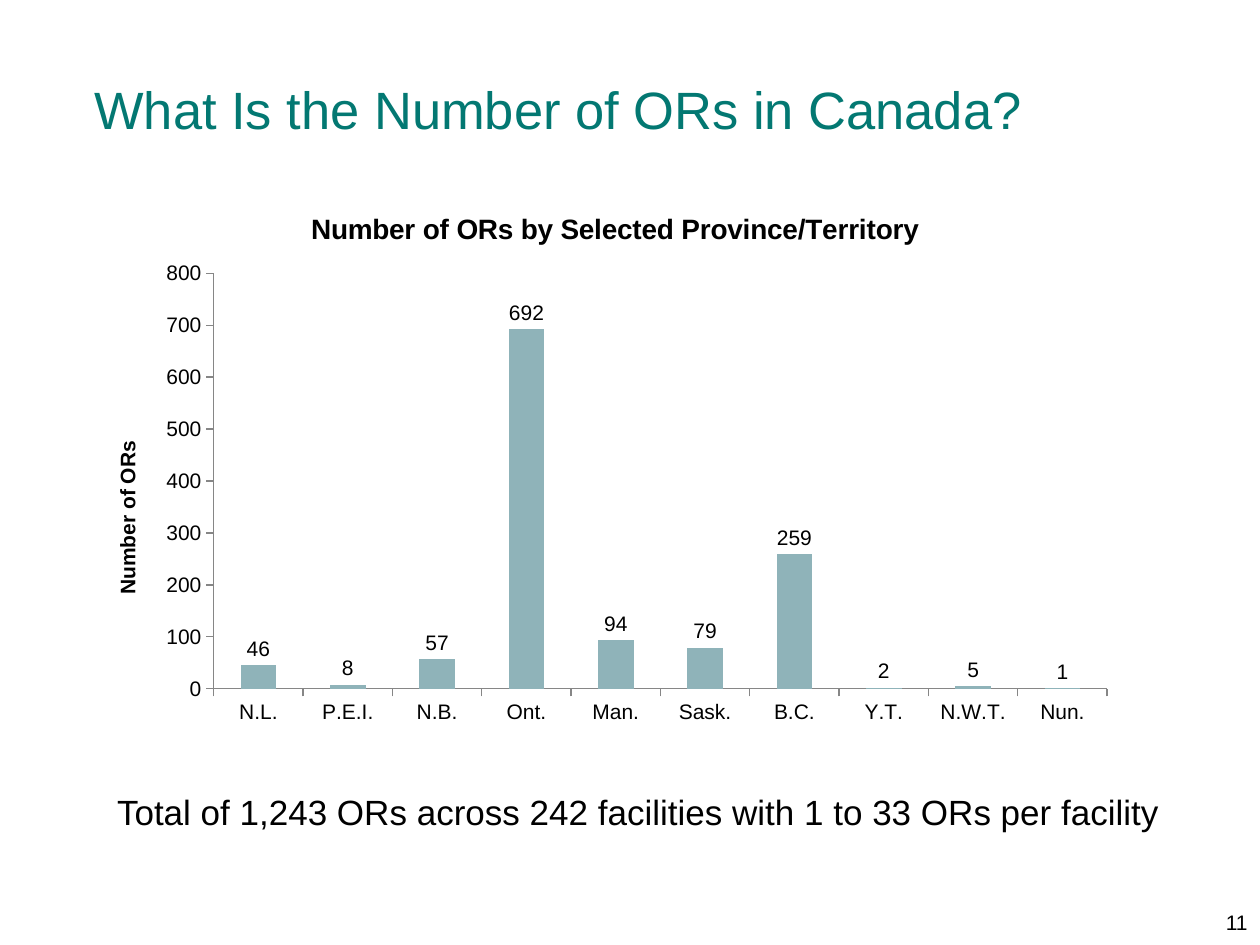
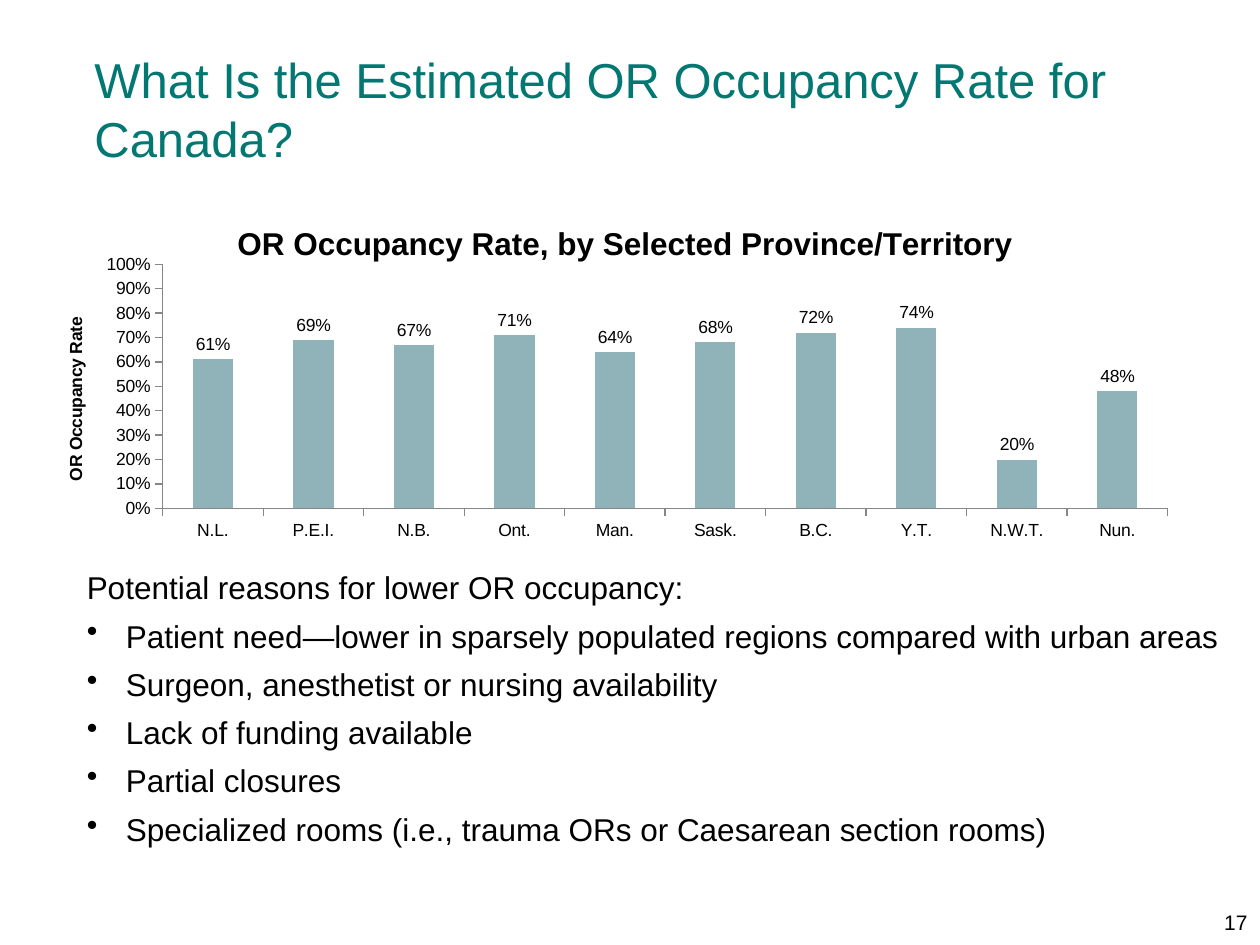
from dataclasses import dataclass
from typing import Any

from lxml.etree import SubElement
from pptx import Presentation
from pptx.chart.data import CategoryChartData
from pptx.dml.color import RGBColor
from pptx.enum.chart import XL_CHART_TYPE, XL_LABEL_POSITION, XL_TICK_MARK
from pptx.enum.text import MSO_ANCHOR, MSO_AUTO_SIZE, PP_ALIGN
from pptx.oxml import parse_xml
from pptx.oxml.ns import nsdecls, qn
from pptx.util import Cm, Pt


@dataclass(frozen=True)
class Theme:
    face: str = "Arial"
    teal: RGBColor = RGBColor(0x03, 0x78, 0x72)
    ink: RGBColor = RGBColor(0, 0, 0)
    bar: RGBColor = RGBColor(0x8F, 0xB3, 0xB9)
    rule: RGBColor = RGBColor(0x86, 0x86, 0x86)
    page: int = 12
    line: float = 0.75


@dataclass(frozen=True)
class Box:
    left: float
    top: float
    width: float = 0
    height: float = 0

    def lengths(self) -> tuple[Cm, Cm, Cm, Cm]:
        return Cm(self.left), Cm(self.top), Cm(self.width), Cm(self.height)


@dataclass(frozen=True)
class Graph:
    box: Box
    plot: Box
    head: str
    head_at: Box
    head_size: int
    axis: str
    axis_at: Box
    size: int
    form: str
    top: float
    step: float
    rates: tuple[float, ...]


@dataclass(frozen=True)
class Note:
    box: Box
    size: int
    lead: str
    points: tuple[str, ...] = ()
    wrap: bool = True


@dataclass(frozen=True)
class Page:
    title: str
    size: int
    number: str
    graph: Graph
    note: Note


THEME = Theme()
TITLE = Box(1.65, 0.91, 21.21, 2.54)
NUMBER = Box(22.66, 18.21, 2.74, 0.84)
INDENT = Cm(0.79)
PLACES = ("N.L.", "P.E.I.", "N.B.", "Ont.", "Man.", "Sask.", "B.C.", "Y.T.", "N.W.T.", "Nun.")

PAGES = (
    Page(
        "What Is the Number of ORs in Canada?", 30, "11",
        Graph(
            Box(1.9, 3.73, 20.8, 11), Box(2.41, 1.78, 18.01, 8.38),
            "Number of ORs by Selected Province/Territory", Box(4.27, 0.43), 16,
            "Number of ORs", Box(0.33, 5.08), 12, "General", 800, 100,
            (46, 8, 57, 692, 94, 79, 259, 2, 5, 1),
        ),
        Note(
            Box(2.11, 15.82, 21.79, 1.12), 20,
            "Total of 1,243 ORs across 242 facilities with 1 to 33 ORs per facility",
        ),
    ),
    Page(
        "What Is the Estimated OR Occupancy Rate for Canada?", 28, "17",
        Graph(
            Box(1.09, 3.94, 22.81, 7.19), Box(2.19, 1.39, 20.26, 4.92),
            "OR Occupancy Rate, by Selected Province/Territory", Box(3.58, 0.43), 18,
            "OR Occupancy Rate", Box(0.14, 2.39), 10, "0%", 1, 0.1,
            (0.61, 0.69, 0.67, 0.71, 0.64, 0.68, 0.72, 0.74, 0.2, 0.48),
        ),
        Note(
            Box(1.5, 11.33, 23.37, 5.94), 18,
            "Potential reasons for lower OR occupancy:",
            (
                "Patient need—lower in sparsely populated regions compared with urban areas",
                "Surgeon, anesthetist or nursing availability",
                "Lack of funding available",
                "Partial closures",
                "Specialized rooms (i.e., trauma ORs or Caesarean section rooms)",
            ),
            False,
        ),
    ),
)


def style(font: Any, size: float, color: RGBColor = THEME.ink, bold: bool = False) -> None:
    font.name = THEME.face
    font.size = Pt(size)
    font.bold = bold
    font.color.rgb = color


def write(para: Any, text: str, size: float, color: RGBColor = THEME.ink, bold: bool = False) -> None:
    run = para.add_run()
    run.text = text
    style(run.font, size, color, bold)


def place(part: Any, index: int, spot: Box, whole: Box) -> None:
    for old in part.findall(qn("c:layout")):
        part.remove(old)
    layout = parse_xml(f"<c:layout {nsdecls('c')}><c:manualLayout/></c:layout>")
    values: dict[str, Any] = {"xMode": "edge", "yMode": "edge"}
    if spot.width:
        values = {"layoutTarget": "inner", **values}
    values |= {"x": spot.left / whole.width, "y": spot.top / whole.height}
    if spot.width:
        values |= {"w": spot.width / whole.width, "h": spot.height / whole.height}
    for name, value in values.items():
        SubElement(layout[0], qn(f"c:{name}")).set("val", str(value))
    part.insert(index, layout)


def label(title: Any, text: str, size: int, spot: Box, whole: Box) -> None:
    write(title.text_frame.paragraphs[0], text, size, bold=True)
    place(title._element, 1, spot, whole)


def draw_graph(slide: Any, graph: Graph) -> None:
    data = CategoryChartData(number_format=graph.form)
    data.categories = PLACES
    data.add_series("Series 1", graph.rates)
    chart = slide.shapes.add_chart(
        XL_CHART_TYPE.COLUMN_CLUSTERED, *graph.box.lengths(), data
    ).chart
    style(chart.font, graph.size)
    chart.has_legend = False
    chart.has_title = True
    label(chart.chart_title, graph.head, graph.head_size, graph.head_at, graph.box)
    place(chart._chartSpace.chart.plotArea, 0, graph.plot, graph.box)

    for axis in (chart.category_axis, chart.value_axis):
        axis.has_major_gridlines = False
        axis.major_tick_mark = XL_TICK_MARK.OUTSIDE
        axis.minor_tick_mark = XL_TICK_MARK.NONE
        axis.format.line.color.rgb = THEME.rule
        axis.format.line.width = Pt(THEME.line)
    scale = chart.value_axis
    scale.minimum_scale = 0
    scale.maximum_scale = graph.top
    scale.major_unit = graph.step
    scale.tick_labels.number_format = graph.form
    scale.tick_labels.number_format_is_linked = False
    scale.has_title = True
    label(scale.axis_title, graph.axis, graph.size, graph.axis_at, graph.box)
    body = scale.axis_title.text_frame._txBody.bodyPr
    body.set("rot", "-5400000")
    body.set("vert", "horz")

    plot = chart.plots[0]
    plot.gap_width = 150
    plot.vary_by_categories = False
    fill = plot.series[0].format.fill
    fill.solid()
    fill.fore_color.rgb = THEME.bar
    plot.has_data_labels = True
    marks = plot.data_labels
    marks.show_value = True
    marks.position = XL_LABEL_POSITION.OUTSIDE_END
    marks.number_format = graph.form
    marks.number_format_is_linked = False
    style(marks.font, graph.size)


def draw_note(slide: Any, note: Note) -> None:
    frame = slide.shapes.add_textbox(*note.box.lengths()).text_frame
    frame.word_wrap = note.wrap
    frame.auto_size = MSO_AUTO_SIZE.SHAPE_TO_FIT_TEXT
    write(frame.paragraphs[0], note.lead, note.size)
    for point in note.points:
        para = frame.add_paragraph()
        props = para._p.get_or_add_pPr()
        props.set("marL", str(INDENT))
        props.set("indent", str(-INDENT))
        SubElement(props, qn("a:buChar")).set("char", "•")
        para.space_before = Pt(6)
        write(para, point, note.size)


def draw_title(slide: Any, page: Page) -> None:
    title = slide.shapes.title
    title.left, title.top, title.width, title.height = TITLE.lengths()
    frame = title.text_frame
    frame.word_wrap = True
    frame.auto_size = MSO_AUTO_SIZE.NONE
    frame.vertical_anchor = MSO_ANCHOR.MIDDLE
    para = frame.paragraphs[0]
    para.alignment = PP_ALIGN.LEFT
    write(para, page.title, page.size, THEME.teal)


def draw_number(slide: Any, number: str) -> None:
    frame = slide.shapes.add_textbox(*NUMBER.lengths()).text_frame
    frame.word_wrap = True
    para = frame.paragraphs[0]
    para.alignment = PP_ALIGN.RIGHT
    write(para, number, THEME.page)


def main() -> None:
    deck = Presentation()
    deck.slide_width, deck.slide_height = Cm(25.4), Cm(19.05)
    layout = deck.slide_layouts.get_by_name("Title Only")
    for page in PAGES:
        slide = deck.slides.add_slide(layout)
        draw_number(slide, page.number)
        draw_title(slide, page)
        draw_graph(slide, page.graph)
        draw_note(slide, page.note)
    deck.save("out.pptx")


if __name__ == "__main__":
    main()
